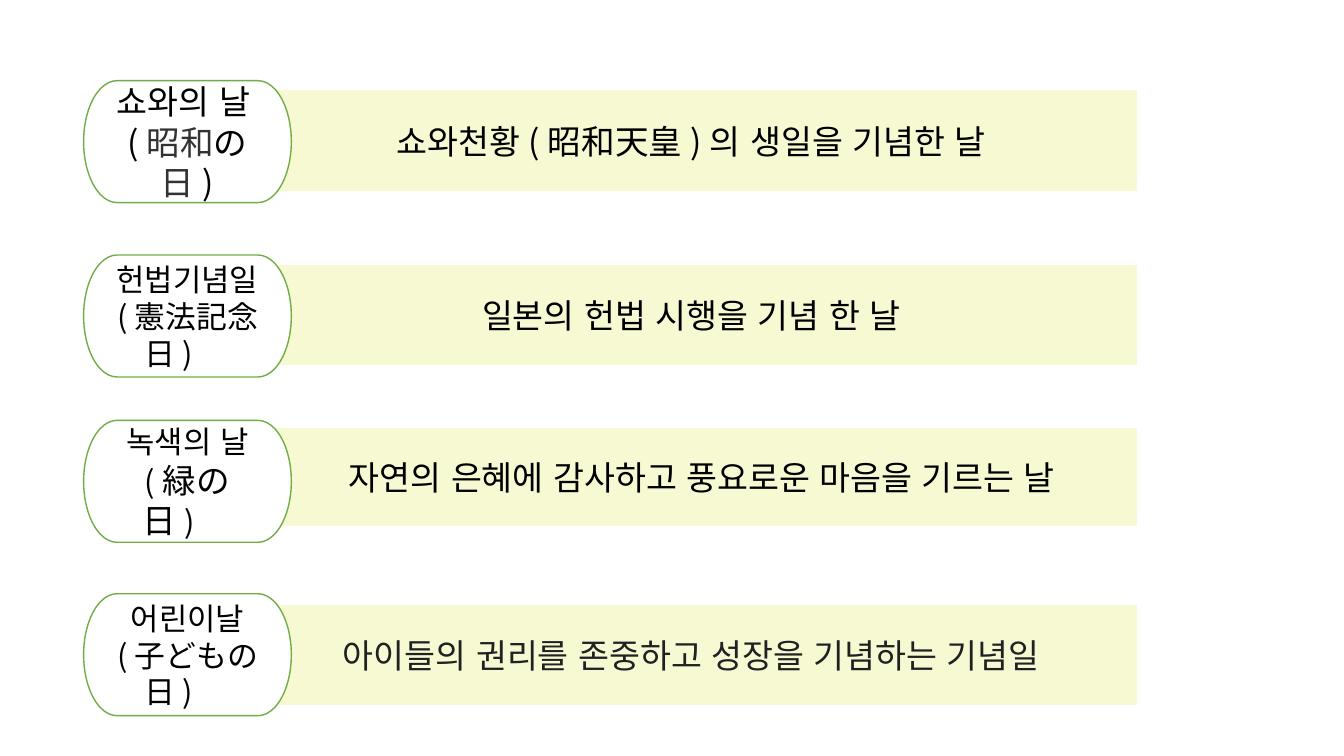
"""Build a slide of four Japanese holidays, each with its meaning."""
from lxml.etree import SubElement
from pptx import Presentation
from pptx.dml.color import RGBColor
from pptx.enum.lang import MSO_LANGUAGE_ID
from pptx.enum.shapes import MSO_SHAPE
from pptx.enum.text import MSO_ANCHOR, PP_ALIGN
from pptx.oxml.ns import qn
from pptx.util import Inches, Pt

KOREAN_FONT = "Noto Sans CJK KR"
BLACK, GREY, CHARCOAL = "000000", "333333", "202122"
WHITE, GREEN, CREAM = "FFFFFF", "70AD47", "F7F9D3"

HOLIDAYS = [
    {
        "name": [("쇼와의 날(", 24, BLACK), ("昭和", 24, GREY), ("の", 24, BLACK),
                 ("日", 24, GREY), (")", 24, BLACK)],
        "meaning": ("쇼와천황(昭和天皇)의 생일을 기념한 날", 24, BLACK),
        "badge_top": 0.8, "bar": (2.43, 0.89, 1.01),
    },
    {
        "name": [("헌법기념일 (憲法記念日)　", 22, BLACK)],
        "meaning": ("일본의 헌법 시행을 기념 한 날", 24, BLACK),
        "badge_top": 2.53, "bar": (2.43, 2.62, 1.01),
    },
    {
        "name": [("녹색의 날 (", 22, BLACK), ("緑の日", 24, BLACK), (")　", 22, BLACK)],
        "meaning": ("자연의 은혜에 감사하고 풍요로운 마음을 기르는 날", 24, BLACK),
        "badge_top": 4.17, "bar": (2.64, 4.24, 0.99),
    },
    {
        "name": [("어린이날 (子どもの日)　", 22, BLACK)],
        "meaning": ("아이들의 권리를 존중하고 성장을 기념하는 기념일", 24, CHARCOAL, "Arial"),
        "badge_top": 5.89, "bar": (2.43, 5.99, 1.01),
    },
]

BADGE_LEFT, BADGE_WIDTH, BADGE_HEIGHT = 0.83, 2.06, 1.21
BAR_RIGHT = 11.28
FRAME_FORMAT = {"word_wrap": True, "vertical_anchor": MSO_ANCHOR.MIDDLE}


def paint(color_format, color):
    color_format.rgb = RGBColor.from_string(color)


def add_wording(paragraph, wording, size, color, font_name=KOREAN_FONT):
    run = paragraph.add_run()
    run.text = wording
    font_format = {"size": Pt(size), "name": font_name,
                   "language_id": MSO_LANGUAGE_ID.KOREAN}
    for attribute, value in font_format.items():
        setattr(run.font, attribute, value)
    paint(run.font.color, color)
    SubElement(run.font._element, qn("a:ea")).set("typeface", KOREAN_FONT)


def add_panel(holiday_group, preset, place, fill, outline, wordings):
    panel = holiday_group.shapes.add_shape(preset, *map(Inches, place))
    panel.shadow.inherit = False
    panel.fill.solid()
    paint(panel.fill.fore_color, fill)
    paint(panel.line.color, outline)
    panel.line.width = Pt(1)
    for attribute, value in FRAME_FORMAT.items():
        setattr(panel.text_frame, attribute, value)
    paragraph = panel.text_frame.paragraphs[0]
    paragraph.alignment = PP_ALIGN.CENTER
    for wording in wordings:
        add_wording(paragraph, *wording)


def main():
    presentation = Presentation()
    presentation.slide_width, presentation.slide_height = Inches(13.33), Inches(7.5)
    slide = presentation.slides.add_slide(presentation.slide_layouts[6])
    for holiday in HOLIDAYS:
        holiday_group = slide.shapes.add_group_shape()
        left, top, height = holiday["bar"]
        bar_place = (left, top, BAR_RIGHT - left, height)
        badge_place = (BADGE_LEFT, holiday["badge_top"], BADGE_WIDTH, BADGE_HEIGHT)
        add_panel(holiday_group, MSO_SHAPE.RECTANGLE, bar_place,
                  CREAM, WHITE, [holiday["meaning"]])
        add_panel(holiday_group, MSO_SHAPE.FLOWCHART_TERMINATOR, badge_place,
                  WHITE, GREEN, holiday["name"])
    presentation.save("out.pptx")


if __name__ == "__main__":
    main()
